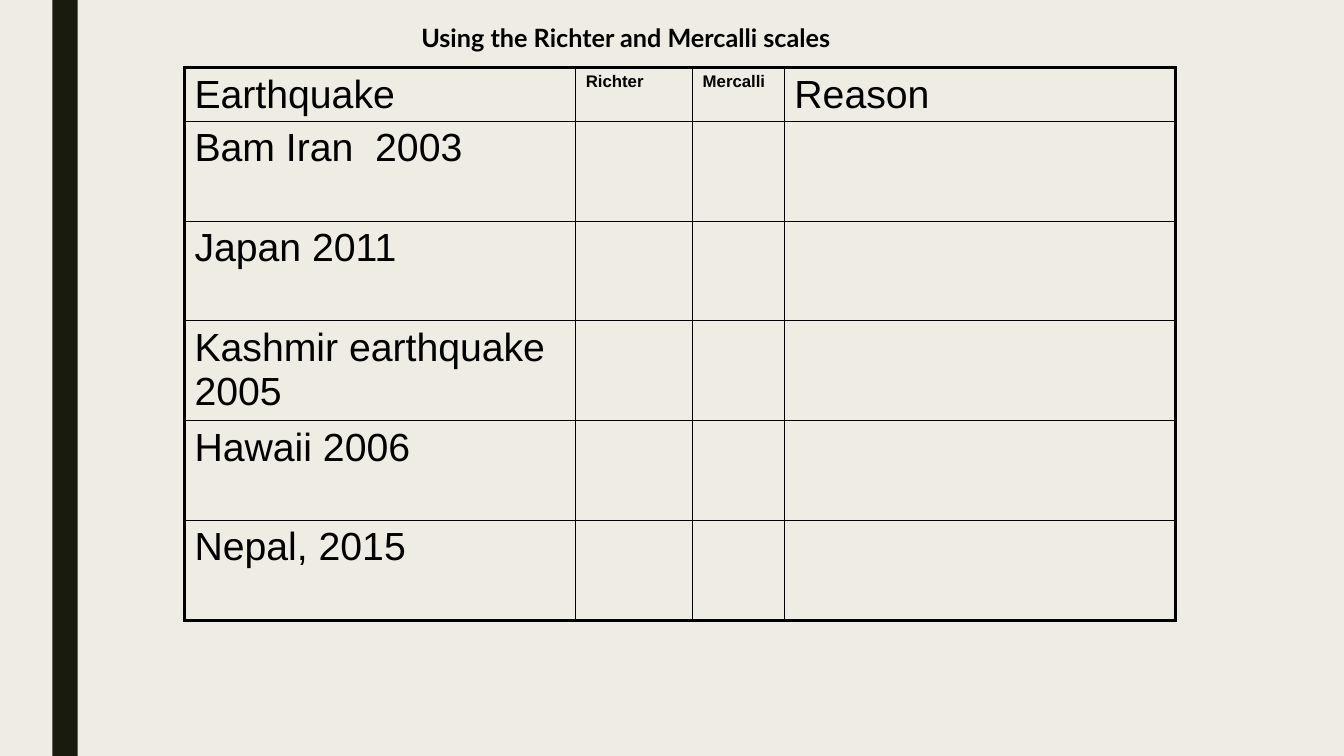
from dataclasses import dataclass

from lxml import etree
from pptx import Presentation
from pptx.dml.color import RGBColor
from pptx.enum.shapes import MSO_SHAPE
from pptx.oxml.ns import qn
from pptx.util import Pt

RECTANGLE = MSO_SHAPE.RECTANGLE
BLANK_LAYOUT = 6
EMU_PER_PX = 9144  # 100 px to the inch


@dataclass(frozen=True)
class Theme:
    background: str = "EFEDE3"
    bar: str = "191B0E"
    ink: str = "000000"
    title_font: str = "Lato"
    table_font: str = "Arial"
    title_size: int = 18
    cell_size: int = 28
    scale_size: int = 12
    inner_line: float = 1
    outer_line: float = 2.25


def px(length):
    return length * EMU_PER_PX


def write_text(text_frame, text, *, font, size, color, bold=False):
    run = text_frame.paragraphs[0].add_run()
    run.text = text
    run.font.name = font
    run.font.size = Pt(size)
    run.font.bold = bold
    run.font.color.rgb = RGBColor.from_string(color)


def set_border(cell, side, width, color):
    properties = cell._tc.get_or_add_tcPr()
    line = etree.SubElement(properties, qn(f"a:ln{side}"), w=str(Pt(width)))
    fill = etree.SubElement(line, qn("a:solidFill"))
    etree.SubElement(fill, qn("a:srgbClr"), val=color)


class SlideBuilder:
    def __init__(self, presentation, theme):
        self.theme = theme
        self.slide = presentation.slides.add_slide(
            presentation.slide_layouts[BLANK_LAYOUT])
        fill = self.slide.background.fill
        fill.solid()
        fill.fore_color.rgb = RGBColor.from_string(theme.background)

    def bar(self, left, top, width, height):
        shape = self.slide.shapes.add_shape(
            RECTANGLE, px(left), px(top), px(width), px(height))
        shape.shadow.inherit = False
        shape.fill.solid()
        shape.fill.fore_color.rgb = RGBColor.from_string(self.theme.bar)
        shape.line.fill.background()

    def title(self, text, left, top, width, height):
        text_frame = self.slide.shapes.add_textbox(
            px(left), px(top), px(width), px(height)).text_frame
        text_frame.word_wrap = True
        write_text(text_frame, text, font=self.theme.title_font,
                   size=self.theme.title_size, color=self.theme.ink, bold=True)

    def table(self, rows, left, top, column_widths, row_heights, small_labels):
        theme = self.theme
        table = self.slide.shapes.add_table(
            len(row_heights), len(column_widths), px(left), px(top),
            px(sum(column_widths)), px(sum(row_heights))).table
        table.first_row = table.horz_banding = False
        for column, width in zip(table.columns, column_widths):
            column.width = px(width)
        for row, height in zip(table.rows, row_heights):
            row.height = px(height)

        last_row, last_column = len(row_heights) - 1, len(column_widths) - 1
        for row_index, texts in enumerate(rows):
            for column_index, text in enumerate(texts):
                cell = table.cell(row_index, column_index)
                # Heavy lines around the table, thin lines inside
                outer_sides = {"L": column_index == 0,
                               "R": column_index == last_column,
                               "T": row_index == 0,
                               "B": row_index == last_row}
                for side, is_outer in outer_sides.items():
                    width = theme.outer_line if is_outer else theme.inner_line
                    set_border(cell, side, width, theme.ink)
                cell.fill.background()
                if text:
                    small = text in small_labels
                    write_text(cell.text_frame, text, font=theme.table_font,
                               size=theme.scale_size if small else theme.cell_size,
                               color=theme.ink, bold=small)


def main():
    presentation = Presentation()
    presentation.slide_width, presentation.slide_height = px(1333), px(750)
    builder = SlideBuilder(presentation, Theme())

    # Side bar
    builder.bar(52, 0, 25, 750)

    # Earthquake table
    scales = ["Richter", "Mercalli"]
    earthquakes = ["Bam Iran  2003", "Japan 2011", "Kashmir earthquake 2005",
                   "Hawaii 2006", "Nepal, 2015"]
    rows = [["Earthquake", *scales, "Reason"]]
    rows += [[earthquake, "", "", ""] for earthquake in earthquakes]
    builder.table(rows, 183, 67, column_widths=[388, 116, 91, 388],
                  row_heights=[50] + [99] * len(earthquakes),
                  small_labels=scales)

    # Title
    builder.title("Using the Richter and Mercalli scales", 408, 17, 642, 40)

    presentation.save("out.pptx")


if __name__ == "__main__":
    main()
